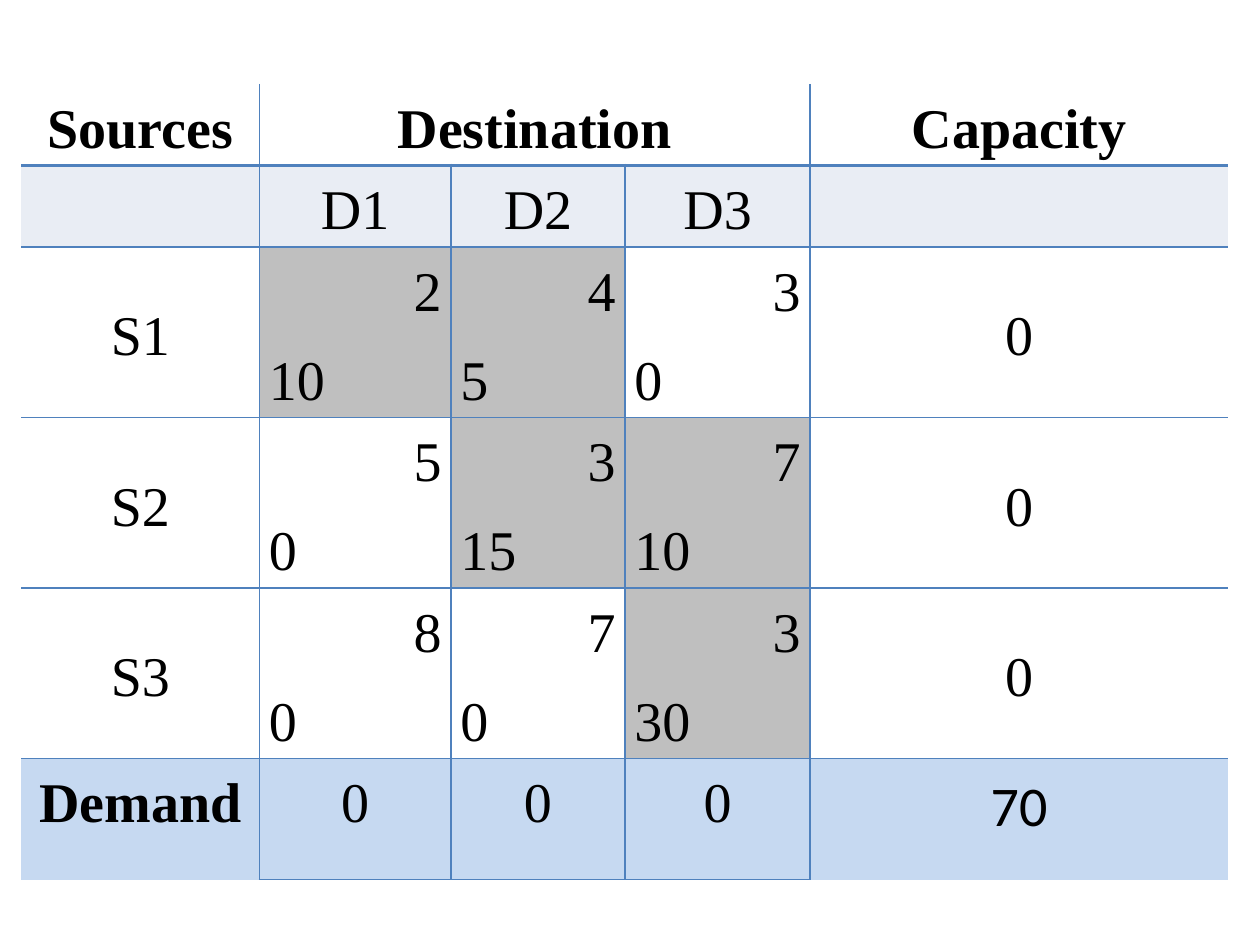
from lxml import etree
from pptx import Presentation
from pptx.dml.color import RGBColor
from pptx.enum.text import MSO_ANCHOR, PP_ALIGN
from pptx.oxml.ns import qn
from pptx.util import Cm, Pt

LEFT, CENTER, RIGHT = PP_ALIGN.LEFT, PP_ALIGN.CENTER, PP_ALIGN.RIGHT
TOP, MIDDLE = MSO_ANCHOR.TOP, MSO_ANCHOR.MIDDLE
COLORS = {"text": "000000", "line": "4F81BD", "plain": "FFFFFF",
          "subhead": "E9EDF4", "allocated": "BFBFBF", "demand": "C6D9F1"}


def write(cell, lines, aligns=(CENTER,), anchor=MIDDLE, bold=False,
          font="Times New Roman"):
    """Write one paragraph per line into a cell."""
    cell.vertical_anchor = anchor
    frame = cell.text_frame
    frame.text = "\n".join(lines)
    for paragraph, align in zip(frame.paragraphs, aligns):
        paragraph.alignment = align
        paragraph.line_spacing = 1.15
        paragraph.space_after = Pt(10)
        for run in paragraph.runs:
            run.font.name = font
            run.font.size = Pt(32)
            run.font.bold = bold
            run.font.color.rgb = RGBColor.from_string(COLORS["text"])


def add_border(cell, side, width):
    """Draw one side of a cell; a width of 0 leaves it open."""
    line = etree.SubElement(cell._tc.get_or_add_tcPr(), qn(f"a:ln{side}"),
                            w=str(Pt(width)))
    if width:
        fill = etree.SubElement(line, qn("a:solidFill"))
        etree.SubElement(fill, qn("a:srgbClr"), val=COLORS["line"])
    else:
        etree.SubElement(line, qn("a:noFill"))


prs = Presentation()
prs.slide_width, prs.slide_height = Cm(25.4), Cm(19.05)
slide = prs.slides.add_slide(prs.slide_layouts[6])

# Table grid
column_widths = [4.8, 3.86, 3.51, 3.73, 8.43]
row_heights = [1.63, 1.63, 3.42, 3.42, 3.42, 2.44]
n_rows, n_cols = len(row_heights), len(column_widths)
table = slide.shapes.add_table(n_rows, n_cols, Cm(0.43), Cm(1.69),
                               Cm(sum(column_widths)),
                               Cm(sum(row_heights))).table
table.first_row = table.horz_banding = False
for column, width in zip(table.columns, column_widths):
    column.width = Cm(width)
for row, height in zip(table.rows, row_heights):
    row.height = Cm(height)

# Open outer frame, heavy rule below the header, closed demand cells
vertical = [0, 1, 1, 1, 1, 0]
header_vertical = [0, 1, 0, 0, 1, 0]
horizontal = [0, 2.25, 1, 1, 1, 1, 0]
row_fills = ["plain", "subhead", "plain", "plain", "plain", "demand"]
for r in range(n_rows):
    edges = vertical if r else header_vertical
    for c in range(n_cols):
        cell = table.cell(r, c)
        closed = r == n_rows - 1 and 0 < c < n_cols - 1
        add_border(cell, "L", edges[c])
        add_border(cell, "R", edges[c + 1])
        add_border(cell, "T", horizontal[r])
        add_border(cell, "B", 1 if closed else horizontal[r + 1])
        cell.fill.solid()
        cell.fill.fore_color.rgb = RGBColor.from_string(COLORS[row_fills[r]])
        cell.margin_left = cell.margin_right = Cm(0.19)
        cell.margin_top = cell.margin_bottom = Cm(0.1)

# Headings
table.cell(0, 1).merge(table.cell(0, 3))
for c, heading in [(0, "Sources"), (1, "Destination"), (4, "Capacity")]:
    write(table.cell(0, c), [heading], bold=True)
for c, destination in enumerate(["D1", "D2", "D3"], start=1):
    write(table.cell(1, c), [destination])

# Sources: unit cost above, allocated amount below
sources = [
    ("S1", [("2", "10"), ("4", "5"), ("3", "0")], "0"),
    ("S2", [("5", "0"), ("3", "15"), ("7", "10")], "0"),
    ("S3", [("8", "0"), ("7", "0"), ("3", "30")], "0"),
]
for r, (source, routes, capacity) in enumerate(sources, start=2):
    write(table.cell(r, 0), [source])
    write(table.cell(r, 4), [capacity])
    for c, (cost, amount) in enumerate(routes, start=1):
        cell = table.cell(r, c)
        write(cell, [cost, amount], aligns=(RIGHT, LEFT), anchor=TOP)
        if amount != "0":
            cell.fill.fore_color.rgb = RGBColor.from_string(COLORS["allocated"])

# Demand
write(table.cell(5, 0), ["Demand"], anchor=TOP, bold=True)
for c in range(1, 4):
    write(table.cell(5, c), ["0"], anchor=TOP)
write(table.cell(5, 4), ["70"], anchor=TOP, font="Calibri")

prs.save("out.pptx")
